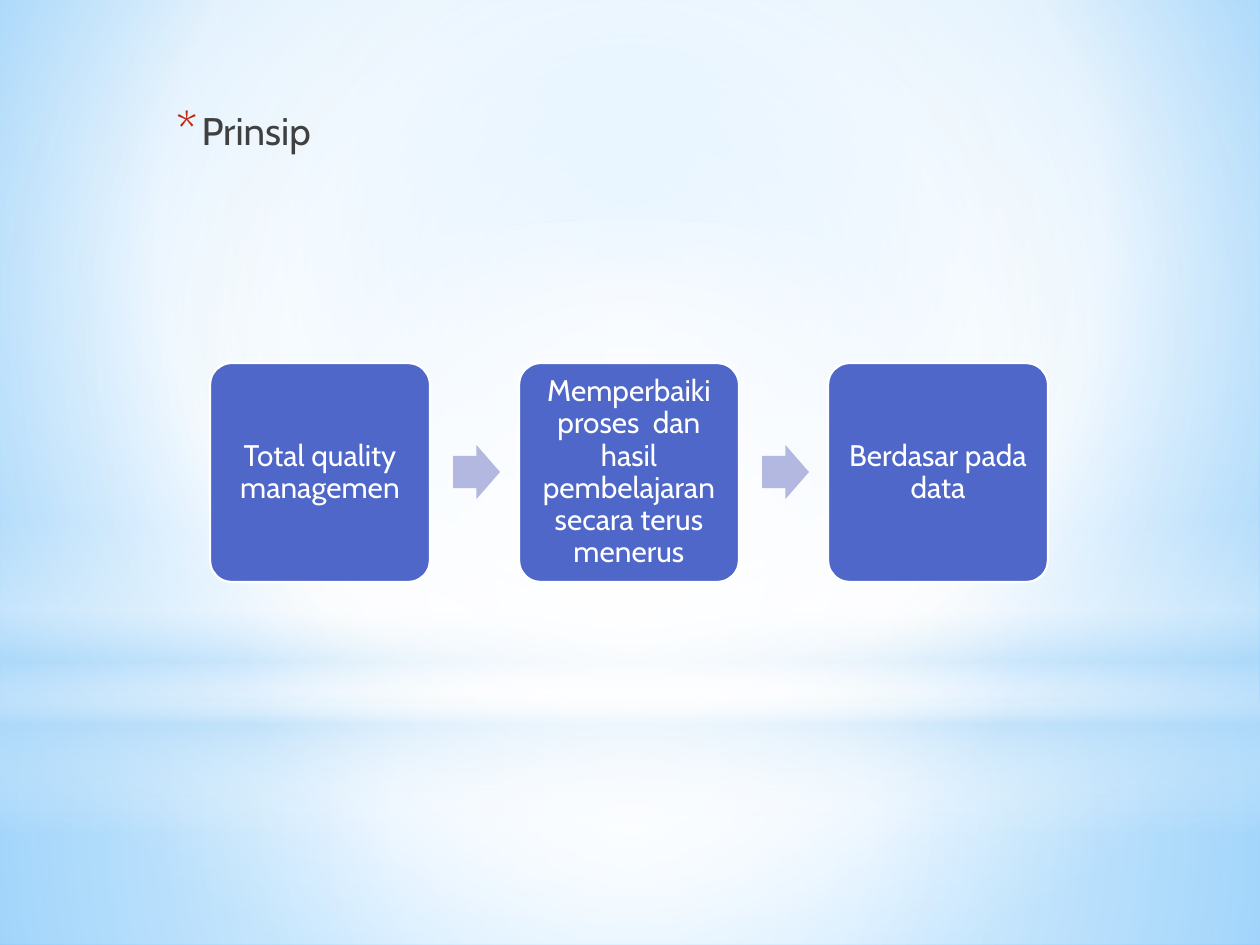
from lxml import etree
from pptx import Presentation
from pptx.dml.color import RGBColor
from pptx.enum.shapes import MSO_SHAPE
from pptx.enum.text import MSO_ANCHOR, MSO_AUTO_SIZE, PP_ALIGN
from pptx.oxml.ns import qn
from pptx.util import Emu, Pt

RECT = MSO_SHAPE.RECTANGLE
ELLIPSE = MSO_SHAPE.OVAL
CARD = MSO_SHAPE.ROUNDED_RECTANGLE
ARROW = MSO_SHAPE.RIGHT_ARROW
TOP, MIDDLE = MSO_ANCHOR.TOP, MSO_ANCHOR.MIDDLE
LEFT, CENTER = PP_ALIGN.LEFT, PP_ALIGN.CENTER
NO_FIT = MSO_AUTO_SIZE.NONE

FONT = "Cabin"
WHITE = RGBColor(0xFF, 0xFF, 0xFF)
INDIGO = RGBColor(0x4E, 0x67, 0xC8)
LAVENDER = RGBColor(0xB2, 0xB8, 0xE0)
GREY = RGBColor(0x40, 0x40, 0x40)
RED = RGBColor(0xC3, 0x26, 0x0C)
SKY = RGBColor(0x9E, 0xD5, 0xFF)
BLUE = RGBColor(0x5B, 0xB9, 0xFF)
PALE = RGBColor(0xB4, 0xDC, 0xFA)

STEPS = [
    "Total quality managemen",
    "Memperbaiki proses  dan hasil pembelajaran secara terus menerus",
    "Berdasar pada data",
]
CARD_X, CARD_Y, CARD_W, CARD_H = 210, 363, 220, 219
PITCH = 309
ARROW_W, ARROW_H = 47, 54
ARROW_X = CARD_X + 243
ARROW_Y = CARD_Y + (CARD_H - ARROW_H) // 2

CENTRE = (50, 50, 50, 50)
LAYERS = [
    (RECT, (0, 703, 1260, 242),
     [(0, WHITE, 91), (37, WHITE, 76), (100, PALE, 79)], CENTRE),
    (RECT, (0, 0, 1260, 703),
     [(0, WHITE, 89), (48, WHITE, 62), (100, PALE, 79)], CENTRE),
    (RECT, (0, 519, 1260, 315),
     [(0, WHITE, 0), (29, WHITE, 30), (45, PALE, 40),
      (55, WHITE, 26), (65, PALE, 60), (100, WHITE, 0)], None),
    (ELLIPSE, (0, 220, 1260, 703),
     [(0, WHITE, 100), (56, WHITE, 0)], CENTRE),
]


def px(n):
    return Emu(round(n * 914400 / 126))


def sub(parent, tag, **attrs):
    child = etree.SubElement(parent, qn(tag))
    for name, value in attrs.items():
        child.set(name, str(value))
    return child


def set_gradient(fill, parent, stops, focus):
    fill.solid()
    solid = parent.find(qn("a:solidFill"))
    grad = etree.Element(qn("a:gradFill"), rotWithShape="1")
    stop_list = sub(grad, "a:gsLst")
    for pos, color, alpha in stops:
        stop = sub(stop_list, "a:gs", pos=pos * 1000)
        clr = sub(stop, "a:srgbClr", val=color)
        if alpha < 100:
            sub(clr, "a:alpha", val=alpha * 1000)
    if focus:
        path = sub(grad, "a:path", path="circle")
        edges = {side: v * 1000 for side, v in zip("ltrb", focus)}
        sub(path, "a:fillToRect", **edges)
    else:
        sub(grad, "a:lin", ang=90 * 60000, scaled=0)
    parent.replace(solid, grad)


def add_shape(s, kind, box, color=None):
    sp = s.shapes.add_shape(kind, *map(px, box))
    sp.shadow.inherit = False
    sp.line.fill.background()
    if color is not None:
        sp.fill.solid()
        sp.fill.fore_color.rgb = color
    return sp


def format_text(p, size, color, align):
    p.alignment = align
    for r in p.runs:
        r.font.name = FONT
        r.font.size = Pt(size)
        r.font.color.rgb = color


def add_backdrop(s):
    bg = s.background.fill
    bg.solid()
    stops = [(0, SKY, 100), (60, WHITE, 100), (100, BLUE, 100)]
    bg_pr = next(s.element.iter(qn("p:bgPr")))
    set_gradient(bg, bg_pr, stops, (20, 10, 20, 60))
    for kind, box, stops, focus in LAYERS:
        sp = add_shape(s, kind, box)
        set_gradient(sp.fill, sp.element.spPr, stops, focus)
        s.shapes.title.element.addprevious(sp.element)


def add_title(s, text):
    title = s.shapes.title
    title.left, title.top, title.width, title.height = map(px, (157, 101, 882, 123))
    tf = title.text_frame
    tf.text = text
    tf.auto_size = NO_FIT
    tf.vertical_anchor = TOP
    p = tf.paragraphs[0]
    format_text(p, 22, GREY, LEFT)
    p.space_before, p.space_after = Pt(4), Pt(3)
    p_pr = p.runs[0].font._element.getparent().getparent().get_or_add_pPr()
    p_pr.set("marL", str(px(32)))
    p_pr.set("indent", str(px(-25)))
    sub(sub(p_pr, "a:buClr"), "a:srgbClr", val=RED)
    sub(p_pr, "a:buSzPct", val=130000)
    sub(p_pr, "a:buFont", typeface=FONT)
    sub(p_pr, "a:buChar", char="*")


def add_card(s, x, text):
    sp = add_shape(s, CARD, (x, CARD_Y, CARD_W, CARD_H), INDIGO)
    sp.adjustments[0] = 0.1
    sp.line.color.rgb = WHITE
    sp.line.width = Pt(1.25)
    tf = sp.text_frame
    tf.text = text
    tf.word_wrap = True
    tf.vertical_anchor = MIDDLE
    tf.margin_left = tf.margin_right = tf.margin_top = tf.margin_bottom = px(9)
    p = tf.paragraphs[0]
    p.line_spacing = 0.9
    format_text(p, 17, WHITE, CENTER)


def add_arrow(s, x):
    sp = add_shape(s, ARROW, (x, ARROW_Y, ARROW_W, ARROW_H), LAVENDER)
    sp.adjustments[0] = 0.6
    sp.adjustments[1] = 0.5


def main():
    prs = Presentation()
    prs.slide_width, prs.slide_height = px(1260), px(945)
    s = prs.slides.add_slide(prs.slide_layouts[5])
    add_backdrop(s)
    add_title(s, "Prinsip")
    for i, text in enumerate(STEPS):
        if i:
            add_arrow(s, ARROW_X + (i - 1) * PITCH)
        add_card(s, CARD_X + i * PITCH, text)
    prs.save("out.pptx")


if __name__ == "__main__":
    main()
